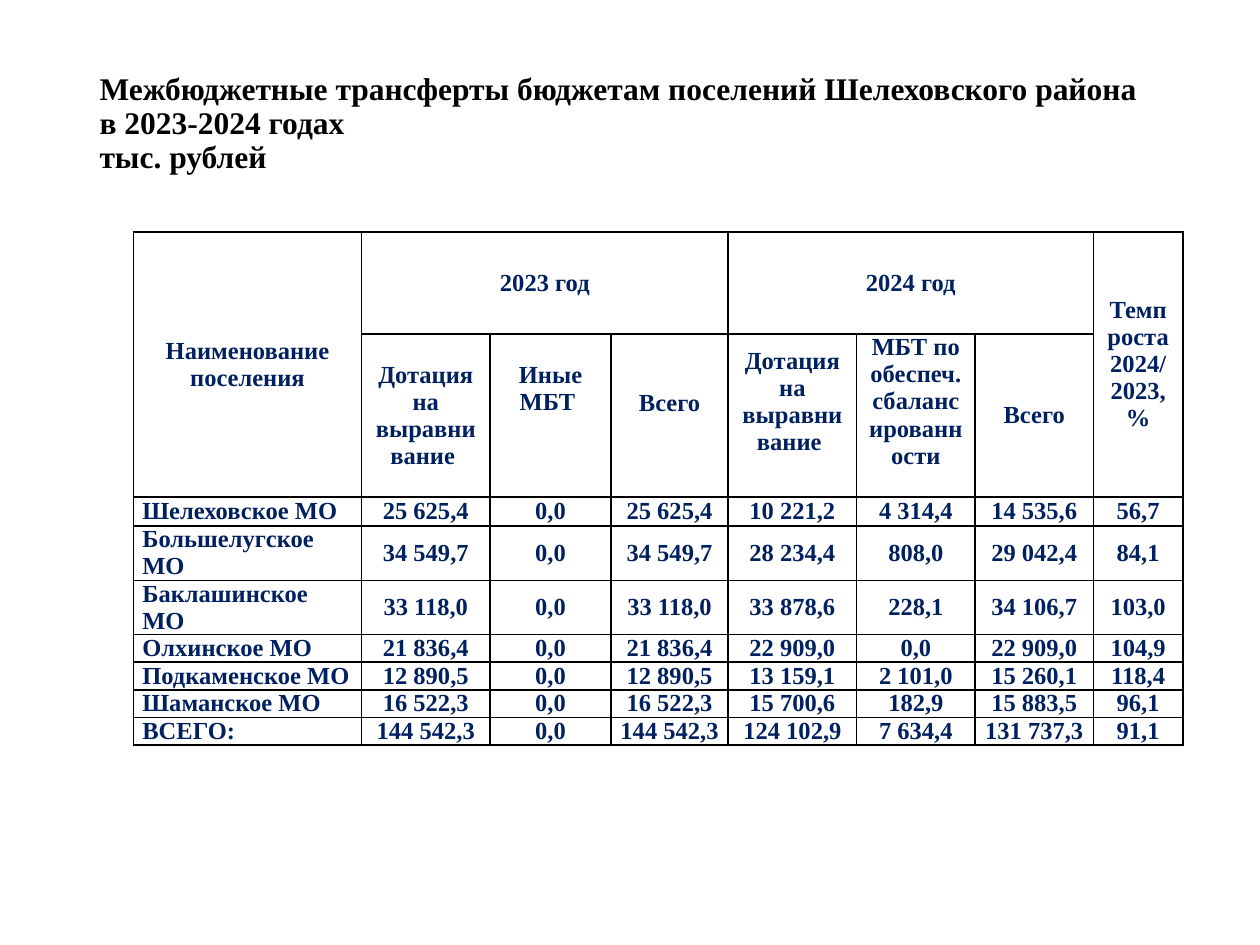
"""Build a slide with a table of budget transfers to settlements."""
from dataclasses import dataclass

from lxml import etree
from pptx import Presentation
from pptx.dml.color import RGBColor
from pptx.enum.text import MSO_ANCHOR, PP_ALIGN
from pptx.oxml.ns import qn
from pptx.table import Table, _Cell
from pptx.text.text import _Paragraph
from pptx.util import Inches, Pt

BLACK = RGBColor(0, 0, 0)
NAVY = RGBColor(0x00, 0x20, 0x60)
FONT = "Times New Roman"
LEFT, CENTER, JUSTIFY = PP_ALIGN.LEFT, PP_ALIGN.CENTER, PP_ALIGN.JUSTIFY
TOP, MIDDLE = MSO_ANCHOR.TOP, MSO_ANCHOR.MIDDLE
LINE = 0.22

TITLE = [
    "Межбюджетные трансферты бюджетам поселений Шелеховского района в 2023-2024 годах",
    "тыс. рублей",
]
COLS = [1.81, 1.02, 0.96, 0.93, 1.02, 0.94, 0.94, 0.71]
ROWS = [0.81, 1.29, 0.23, 0.43, 0.43] + [LINE] * 4


@dataclass(frozen=True)
class Header:
    row: int
    col: int
    text: str
    rows: int = 1
    cols: int = 1
    anchor: MSO_ANCHOR = MIDDLE
    top: float = 0
    bottom: float = 0


HEADERS = [
    Header(0, 0, "Наименование\nпоселения", rows=2),
    Header(0, 1, "2023 год", cols=3),
    Header(0, 4, "2024 год", cols=3),
    Header(0, 7, "Темп роста 2024/ 2023, %", rows=2),
    Header(1, 1, "Дотация на выравнивание "),
    Header(1, 2, "Иные МБТ ", anchor=TOP, top=LINE),
    Header(1, 3, "Всего", anchor=TOP, top=2 * LINE),
    Header(1, 4, "Дотация на выравнивание ", bottom=LINE),
    Header(1, 5, "МБТ по обеспеч. сбалансированности", bottom=LINE),
    Header(1, 6, "Всего"),
]
DATA = [
    ("Шелеховское МО", "25 625,4", "0,0", "25 625,4", "10 221,2", "4 314,4", "14 535,6", "56,7"),
    ("Большелугское МО", "34 549,7", "0,0", "34 549,7", "28 234,4", "808,0", "29 042,4", "84,1"),
    ("Баклашинское МО", "33 118,0", "0,0", "33 118,0", "33 878,6", "228,1", "34 106,7", "103,0"),
    ("Олхинское МО", "21 836,4", "0,0", "21 836,4", "22 909,0", "0,0", "22 909,0", "104,9"),
    ("Подкаменское МО", "12 890,5", "0,0", "12 890,5", "13 159,1", "2 101,0", "15 260,1", "118,4"),
    ("Шаманское МО", "16 522,3", "0,0", "16 522,3", "15 700,6", "182,9", "15 883,5", "96,1"),
    ("ВСЕГО:", "144 542,3", "0,0", "144 542,3", "124 102,9", "7 634,4", "131 737,3", "91,1"),
]


def add_run(p: _Paragraph, text: str, size: float, color: RGBColor) -> None:
    r = p.add_run()
    r.text = text
    r.font.name = FONT
    r.font.size = Pt(size)
    r.font.bold = True
    r.font.color.rgb = color


def write_cell(cell: _Cell, text: str, align: PP_ALIGN = CENTER,
               anchor: MSO_ANCHOR = MIDDLE, top: float = 0, bottom: float = 0) -> None:
    cell.vertical_anchor = anchor
    cell.margin_top, cell.margin_bottom = Inches(top), Inches(bottom)
    tf = cell.text_frame
    for i, line in enumerate(text.split("\n")):
        p = tf.add_paragraph() if i else tf.paragraphs[0]
        p.alignment = align
        add_run(p, line, 14, NAVY)


def format_cell(cell: _Cell) -> None:
    cell.margin_left = cell.margin_right = Inches(0.07)
    cell.margin_top = cell.margin_bottom = 0
    tc_pr = cell._tc.get_or_add_tcPr()
    for side in ("a:lnL", "a:lnR", "a:lnT", "a:lnB"):
        ln = etree.SubElement(tc_pr, qn(side), w=str(Pt(1)))
        fill = etree.SubElement(ln, qn("a:solidFill"))
        etree.SubElement(fill, qn("a:srgbClr"), val=str(BLACK))
    cell.fill.background()


def fill_table(table: Table) -> None:
    table.first_row = table.horz_banding = False
    for column, width in zip(table.columns, COLS):
        column.width = Inches(width)
    for row, height in zip(table.rows, ROWS):
        row.height = Inches(height)
    for cell in table.iter_cells():
        format_cell(cell)
    for h in HEADERS:
        cell = table.cell(h.row, h.col)
        if h.rows * h.cols > 1:
            cell.merge(table.cell(h.row + h.rows - 1, h.col + h.cols - 1))
        write_cell(cell, h.text, CENTER, h.anchor, h.top, h.bottom)
    for i, values in enumerate(DATA, start=2):
        for j, value in enumerate(values):
            write_cell(table.cell(i, j), value, CENTER if j else JUSTIFY)


def main() -> None:
    prs = Presentation()
    prs.slide_width, prs.slide_height = Inches(10), Inches(7.5)
    s = prs.slides.add_slide(prs.slide_layouts[5])

    title = s.shapes.title
    title.left, title.top = Inches(0.69), Inches(0.4)
    title.width, title.height = Inches(8.62), Inches(1.45)
    tf = title.text_frame
    tf.word_wrap = True
    tf.vertical_anchor = MIDDLE
    tf.margin_bottom = Inches(0.32)
    p = tf.paragraphs[0]
    p.alignment = LEFT
    p.line_spacing = 0.9
    p.space_before = Pt(0)
    for i, line in enumerate(TITLE):
        if i:
            p.add_line_break()
        add_run(p, line, 18, BLACK)

    frame = s.shapes.add_table(len(ROWS), len(COLS), Inches(1.06), Inches(1.84),
                               Inches(sum(COLS)), Inches(sum(ROWS)))
    fill_table(frame.table)
    prs.save("out.pptx")


if __name__ == "__main__":
    main()
